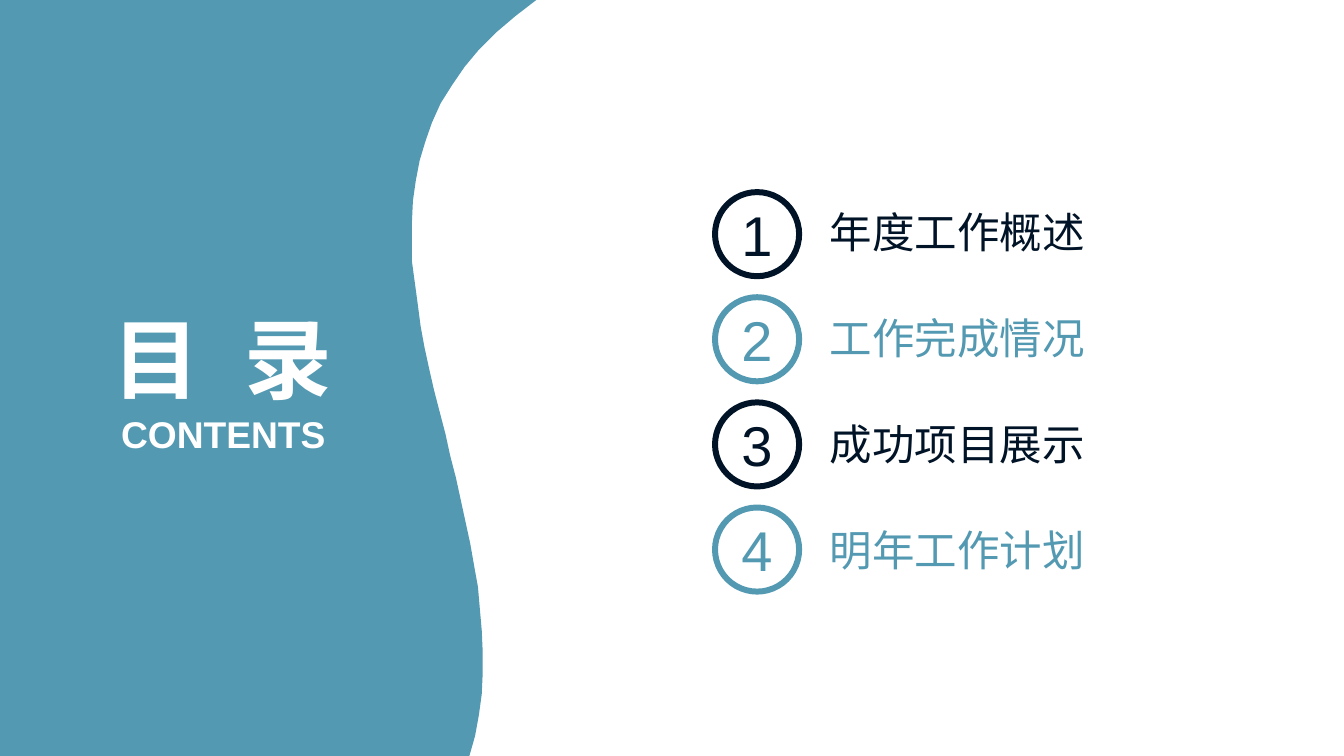
from pptx import Presentation
from pptx.dml.color import RGBColor
from pptx.enum import shapes, text
from pptx.util import Inches, Pt

TEAL = RGBColor(0x53, 0x99, 0xB2)
NAVY = RGBColor(0x01, 0x13, 0x27)
WHITE = RGBColor(0xFF, 0xFF, 0xFF)
WIDTH, HEIGHT = 14.06, 7.91

WAVE = [
    (5.61, 0), (5.39, 0.17), (5.19, 0.34), (5.01, 0.52), (4.86, 0.7),
    (4.73, 0.89), (4.61, 1.08), (4.52, 1.28), (4.45, 1.48), (4.39, 1.68),
    (4.35, 1.89), (4.32, 2.1), (4.31, 2.31), (4.31, 2.52), (4.31, 2.74),
    (4.34, 2.96), (4.37, 3.18), (4.4, 3.41), (4.44, 3.63), (4.49, 3.86),
    (4.54, 4.08), (4.6, 4.31), (4.66, 4.54), (4.71, 4.77), (4.77, 5),
    (4.82, 5.23), (4.87, 5.46), (4.92, 5.69), (4.96, 5.92), (5, 6.14),
    (5.02, 6.37), (5.04, 6.6), (5.05, 6.82), (5.05, 7.04), (5.04, 7.26),
    (5.01, 7.48), (4.97, 7.7), (4.91, 7.91),
]
TOPICS = ["年度工作概述", "工作完成情况", "成功项目展示", "明年工作计划"]


def write(sp, runs, size, color, align, anchor, bold=False):
    tf = sp.text_frame
    tf.margin_left = tf.margin_top = tf.margin_right = tf.margin_bottom = 0
    tf.word_wrap = True
    tf.vertical_anchor = anchor
    p = tf.paragraphs[0]
    p.alignment = align
    p.font.name = "Arial"
    p.font.size = Pt(size)
    p.font.bold = bold
    p.font.color.rgb = color
    for words in runs:
        p.add_run().text = words
    return p


def add_text(s, box, runs, size, color, align=text.PP_ALIGN.LEFT,
             anchor=text.MSO_ANCHOR.MIDDLE, bold=False):
    sp = s.shapes.add_textbox(*map(Inches, box))
    p = write(sp, runs, size, color, align, anchor, bold)
    sp.text_frame.auto_size = text.MSO_AUTO_SIZE.SHAPE_TO_FIT_TEXT
    return p


def add_title_panel(s, left, top, height):
    outline = [(left + x, top + y) for x, y in WAVE] + [(left, top + height)]
    fb = s.shapes.build_freeform(Inches(left), Inches(top))
    fb.add_line_segments([(Inches(x), Inches(y)) for x, y in outline])
    sp = fb.convert_to_shape()
    sp.shadow.inherit = False
    sp.fill.solid()
    sp.fill.fore_color.rgb = TEAL
    sp.line.fill.background()

    center = text.PP_ALIGN.CENTER
    p = add_text(s, (left + 0.76, top + 3.19, 3.14, 1.11), ["目 ", "录"],
                 66, WHITE, center, bold=True)
    p.runs[0].font._element.set("spc", "915")
    add_text(s, (left + 0.78, top + 4.3, 3.11, 0.47), ["CONTENTS"],
             28, WHITE, center, text.MSO_ANCHOR.TOP, True)


def add_topics(s, left, top, diameter, circle_pitch, label_pitch):
    for i, topic in enumerate(TOPICS):
        color = TEAL if i % 2 else NAVY
        box = (left, top + i * circle_pitch, diameter, diameter)
        sp = s.shapes.add_shape(shapes.MSO_SHAPE.OVAL, *map(Inches, box))
        sp.shadow.inherit = False
        sp.fill.solid()
        sp.fill.fore_color.rgb = WHITE
        sp.line.color.rgb = color
        sp.line.width = Pt(4.5)
        write(sp, [str(i + 1)], 42.2, color, text.PP_ALIGN.CENTER,
              text.MSO_ANCHOR.MIDDLE)
        add_text(s, (left + 1.2, top + 0.14 + i * label_pitch, 2.96, 0.54),
                 [topic], 32, color)


def main():
    prs = Presentation()
    prs.slide_width, prs.slide_height = Inches(WIDTH), Inches(HEIGHT)
    s = prs.slides.add_slide(prs.slide_layouts[6])
    add_title_panel(s, 0, 0, HEIGHT)
    add_topics(s, 7.48, 2.01, 0.88, 1.1, 1.11)
    prs.save("out.pptx")


if __name__ == "__main__":
    main()
